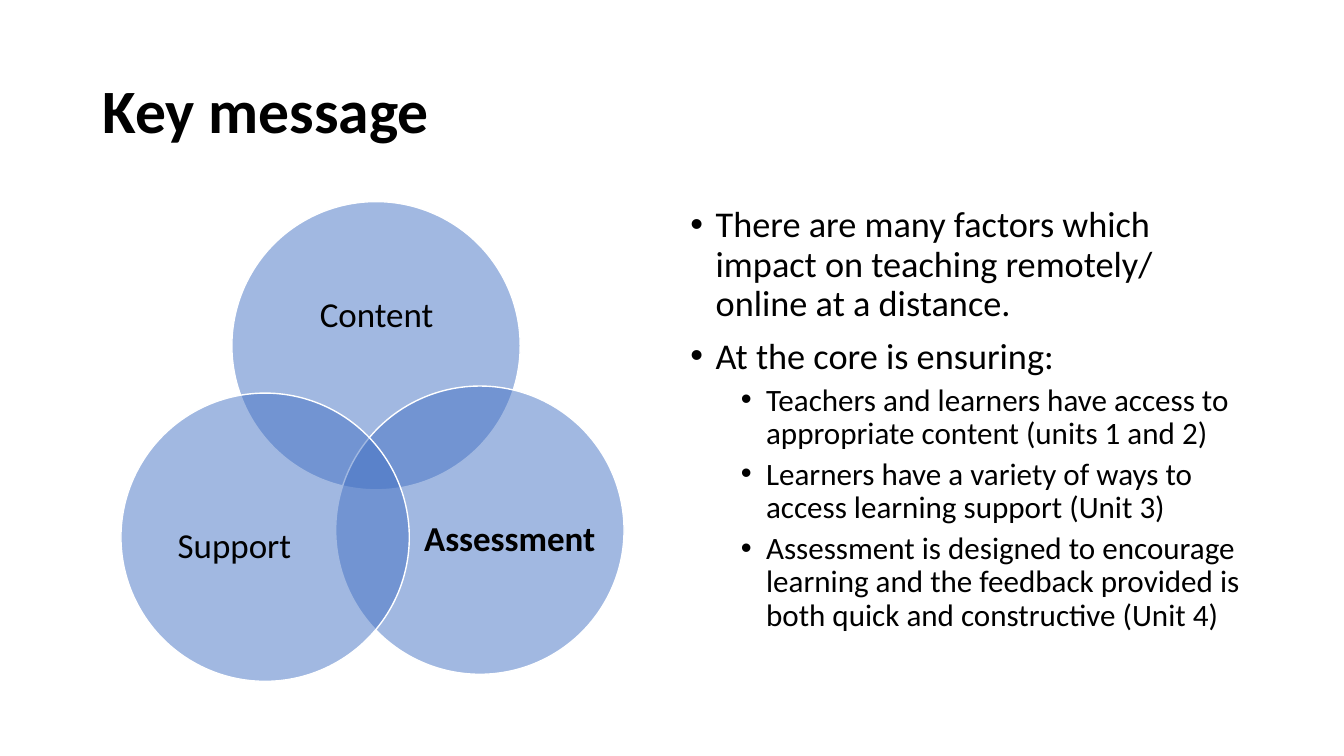
from lxml import etree
from pptx import Presentation
from pptx import util as u
from pptx.dml.color import RGBColor
from pptx.enum import shapes, text
from pptx.oxml.ns import qn

COLORS = {"ink": "000000", "blue": "4472C4", "white": "FFFFFF"}
FONT = "Calibri"


class Deck:
    def __init__(self):
        self.prs = Presentation()
        self.prs.slide_width = u.Inches(13.33)
        self.prs.slide_height = u.Inches(7.5)
        self.slide = self.prs.slides.add_slide(self.prs.slide_layouts[6])

    def color(self, name):
        return RGBColor.from_string(COLORS[name])

    def style(self, para, size, bold=False):
        para.line_spacing = 0.9
        for run in para.runs:
            run.font.name = FONT
            run.font.size = u.Pt(size)
            run.font.bold = bold
            run.font.color.rgb = self.color("ink")

    def frame(self, left, top, width, height):
        box = self.slide.shapes.add_textbox(*map(u.Inches, (left, top, width, height)))
        box.text_frame.word_wrap = True
        return box.text_frame

    def title(self, words, *place):
        frame = self.frame(*place)
        frame.vertical_anchor = text.MSO_ANCHOR.MIDDLE
        frame.text = words
        self.style(frame.paragraphs[0], 44, True)

    def circle(self, left, top, size):
        shape = self.slide.shapes.add_shape(
            shapes.MSO_SHAPE.OVAL, *map(u.Inches, (left, top, size, size)))
        shape.shadow.inherit = False
        shape.fill.solid()
        shape.fill.fore_color.rgb = self.color("blue")
        tint = shape.fill._xPr.find(qn("a:solidFill"))[0]
        etree.SubElement(tint, qn("a:alpha"), val="50000")
        shape.line.color.rgb = self.color("white")
        shape.line.width = u.Pt(1)

    def label(self, words, place, bold):
        frame = self.frame(*place)
        frame.margin_left = frame.margin_right = 0
        frame.margin_top = frame.margin_bottom = 0
        frame.vertical_anchor = text.MSO_ANCHOR.MIDDLE
        frame.text = words
        para = frame.paragraphs[0]
        para.alignment = text.PP_ALIGN.CENTER
        self.style(para, 25, bold)

    def bullets(self, items, *place):
        frame = self.frame(*place)
        for i, (level, words) in enumerate(items):
            para = frame.add_paragraph() if i else frame.paragraphs[0]
            para.text = words
            para.level = level
            props = para._p.get_or_add_pPr()
            props.set("marL", str(u.Inches(0.25 + 0.5 * level)))
            props.set("indent", str(u.Inches(-0.25)))
            etree.SubElement(props, qn("a:buFont"), typeface="Arial")
            etree.SubElement(props, qn("a:buChar"), char="•")
            para.space_before = u.Pt((5 if level else 10) if i else 0)
            self.style(para, 22.2 if level else 25.9)


def main():
    deck = Deck()
    deck.title("Key message", 0.92, 0.4, 11.5, 1.45)
    venn = [
        ("Content", 2.3, 2, (2.69, 2.5, 2.09, 1.28), False),
        ("Assessment", 3.33, 3.83, (4.2, 4.57, 1.71, 1.57), True),
        ("Support", 1.2, 3.9, (1.47, 4.64, 1.71, 1.57), False),
    ]
    for words, left, top, place, bold in venn:
        deck.circle(left, top, 2.86)
        deck.label(words, place, bold)
    deck.bullets([
        (0, "There are many factors which impact on teaching remotely/ online at a distance."),
        (0, "At the core is ensuring:"),
        (1, "Teachers and learners have access to appropriate content (units 1 and 2)"),
        (1, "Learners have a variety of ways to access learning support (Unit 3)"),
        (1, "Assessment is designed to encourage learning and the feedback provided is "
            "both quick and constructive (Unit 4)"),
    ], 6.75, 2, 5.67, 4.76)
    deck.prs.save("out.pptx")


if __name__ == "__main__":
    main()
